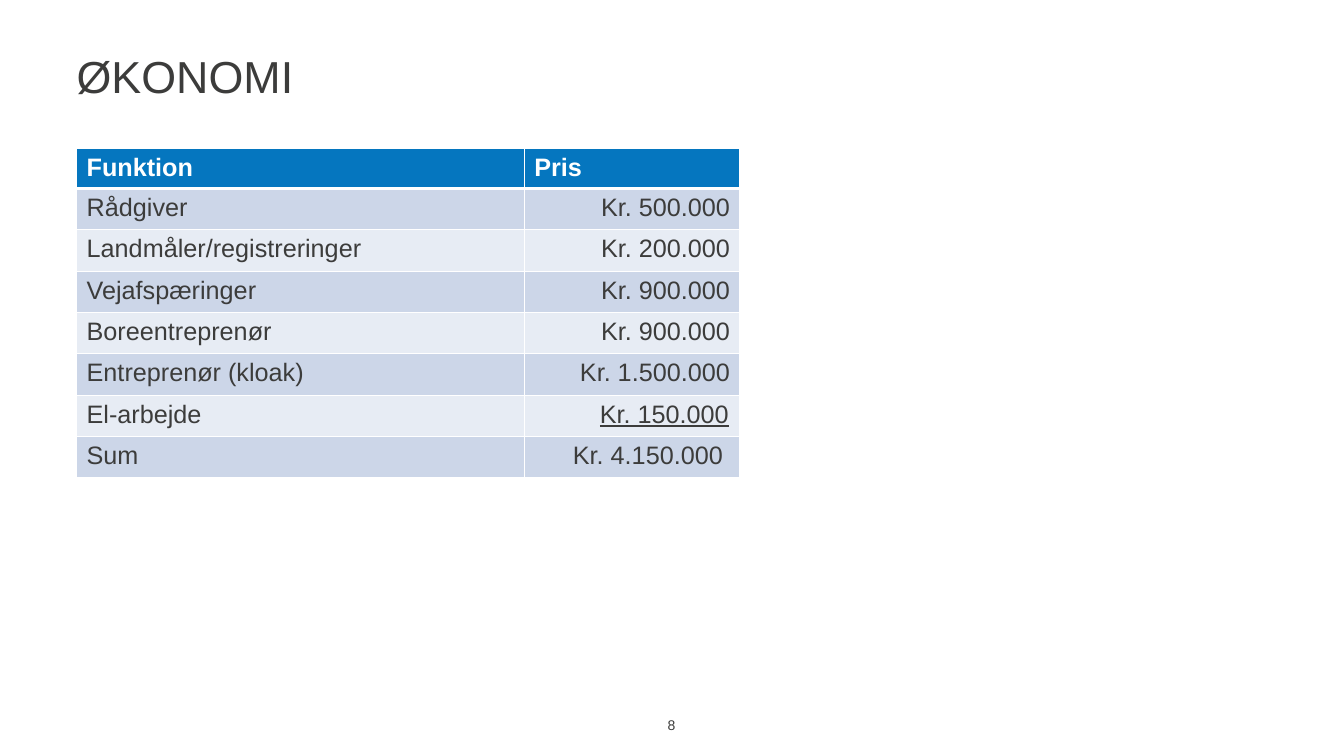
import lxml.etree
import pptx
import pptx.dml.color
import pptx.enum.text
import pptx.oxml.ns
import pptx.util

Inches = pptx.util.Inches
Pt = pptx.util.Pt
Align = pptx.enum.text.PP_ALIGN
Anchor = pptx.enum.text.MSO_ANCHOR
qn = pptx.oxml.ns.qn

COLORS = {"text": "3C3C3B", "head": "0576BF", "dark": "CCD6E8",
          "light": "E7ECF4", "white": "FFFFFF"}
ROWS = [
    ("Funktion", "Pris"),
    ("Rådgiver", "Kr. 500.000"),
    ("Landmåler/registreringer", "Kr. 200.000"),
    ("Vejafspæringer", "Kr. 900.000"),
    ("Boreentreprenør", "Kr. 900.000"),
    ("Entreprenør (kloak)", "Kr. 1.500.000"),
    ("El-arbejde", "Kr. 150.000"),
    ("Sum", "Kr. 4.150.000"),
]


def tint(name):
    return pptx.dml.color.RGBColor.from_string(COLORS[name])


def write(frame, text, align, color="text", **style):
    para = frame.paragraphs[0]
    para.alignment = align
    run = para.add_run()
    run.text = text
    run.font.color.rgb = tint(color)
    for key, value in {"name": "Arial", **style}.items():
        setattr(run.font, key, value)
    return para


def label(slide, box, text, size, align, anchor):
    frame = slide.shapes.add_textbox(*map(Inches, box)).text_frame
    look = {"word_wrap": True, "vertical_anchor": anchor, "margin_left": 0,
            "margin_right": 0, "margin_top": 0, "margin_bottom": 0}
    for key, value in look.items():
        setattr(frame, key, value)
    return write(frame, text, align, size=Pt(size))


def edge(cell, base):
    props = cell._tc.get_or_add_tcPr()
    widths = {"lnL": 1, "lnR": 1, "lnT": 1, "lnB": base}
    for spot, (tag, width) in enumerate(widths.items()):
        line = lxml.etree.Element(qn("a:" + tag), w=str(Pt(width)))
        fill = lxml.etree.SubElement(line, qn("a:solidFill"))
        lxml.etree.SubElement(fill, qn("a:srgbClr"), val=COLORS["white"])
        props.insert(spot, line)


def rule(cell, para):
    cell.margin_left = Inches(0.2)
    cell.margin_right = Inches(0.05)
    para.alignment = Align.LEFT
    para.runs[0].text = "\t" + para.runs[0].text
    para.runs[0].font.underline = True
    tabs = lxml.etree.SubElement(para._p.get_or_add_pPr(), qn("a:tabLst"))
    lxml.etree.SubElement(tabs, qn("a:tab"), pos=str(Inches(0.55)), algn="l")


def prices(slide, box):
    left, top, width, height = box
    first = 0.37
    step = (height - first) / (len(ROWS) - 1)
    grid = slide.shapes.add_table(len(ROWS), 2, *map(Inches, box)).table
    for col, part in zip(grid.columns, (4.44, width - 4.44)):
        col.width = Inches(part)
    for r, row in enumerate(ROWS):
        head = r == 0
        grid.rows[r].height = Inches(first if head else step)
        shade = "head" if head else ("light", "dark")[r % 2]
        for c, text in enumerate(row):
            cell = grid.cell(r, c)
            cell.fill.solid()
            cell.fill.fore_color.rgb = tint(shade)
            edge(cell, 3 if head else 1)
            align = Align.RIGHT if c and not head else Align.LEFT
            para = write(cell.text_frame, text, align,
                         "white" if head else "text", size=Pt(18), bold=head)
            if c and r == len(ROWS) - 2:
                rule(cell, para)
    grid.cell(len(ROWS) - 1, 1).margin_right = Inches(0.17)


def main():
    deck = pptx.Presentation()
    deck.slide_width = Inches(13.33)
    deck.slide_height = Inches(7.5)
    slide = deck.slides.add_slide(deck.slide_layouts[6])
    title = label(slide, (0.76, 0.57, 11.78, 0.65), "ØKONOMI", 32,
                  Align.LEFT, Anchor.TOP)
    title.line_spacing = 0.83
    prices(slide, (0.76, 1.47, 6.58, 3.24))
    label(slide, (6.23, 7.08, 0.86, 0.2), "8", 10, Align.CENTER, Anchor.BOTTOM)
    deck.save("out.pptx")


if __name__ == "__main__":
    main()
